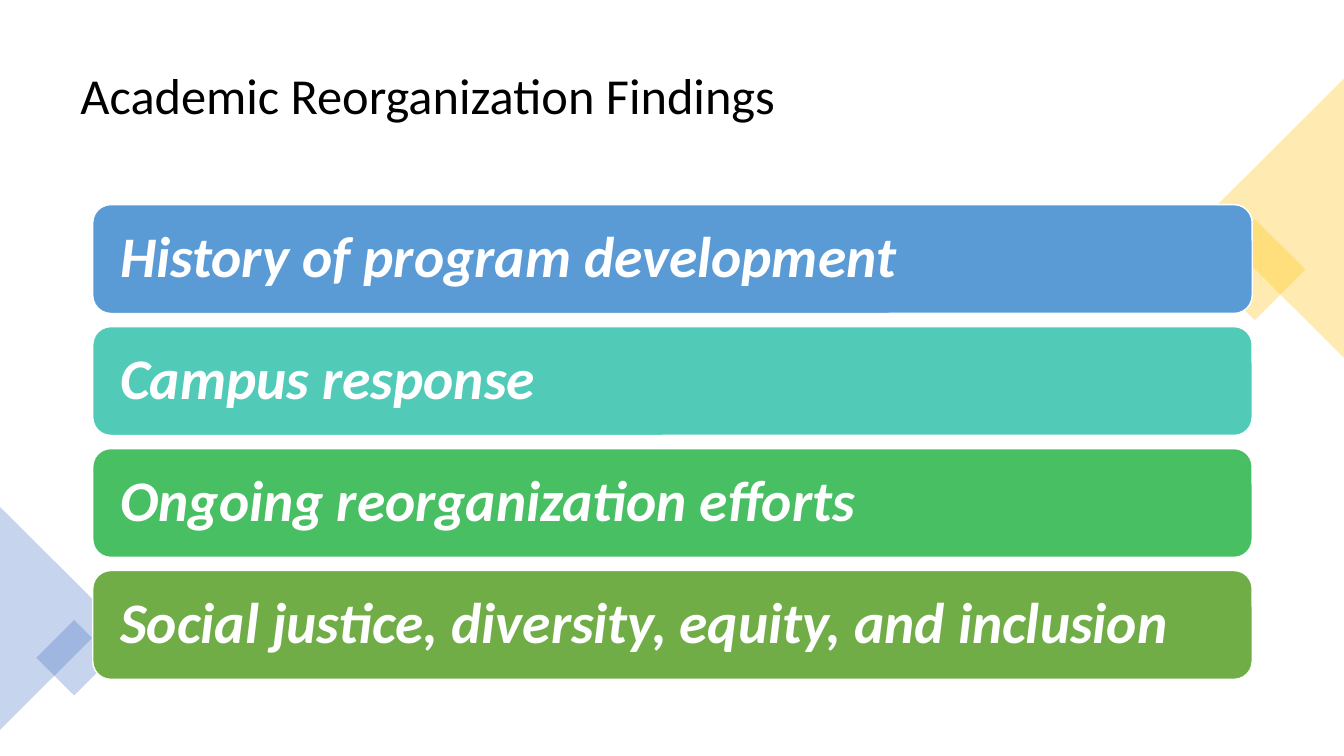
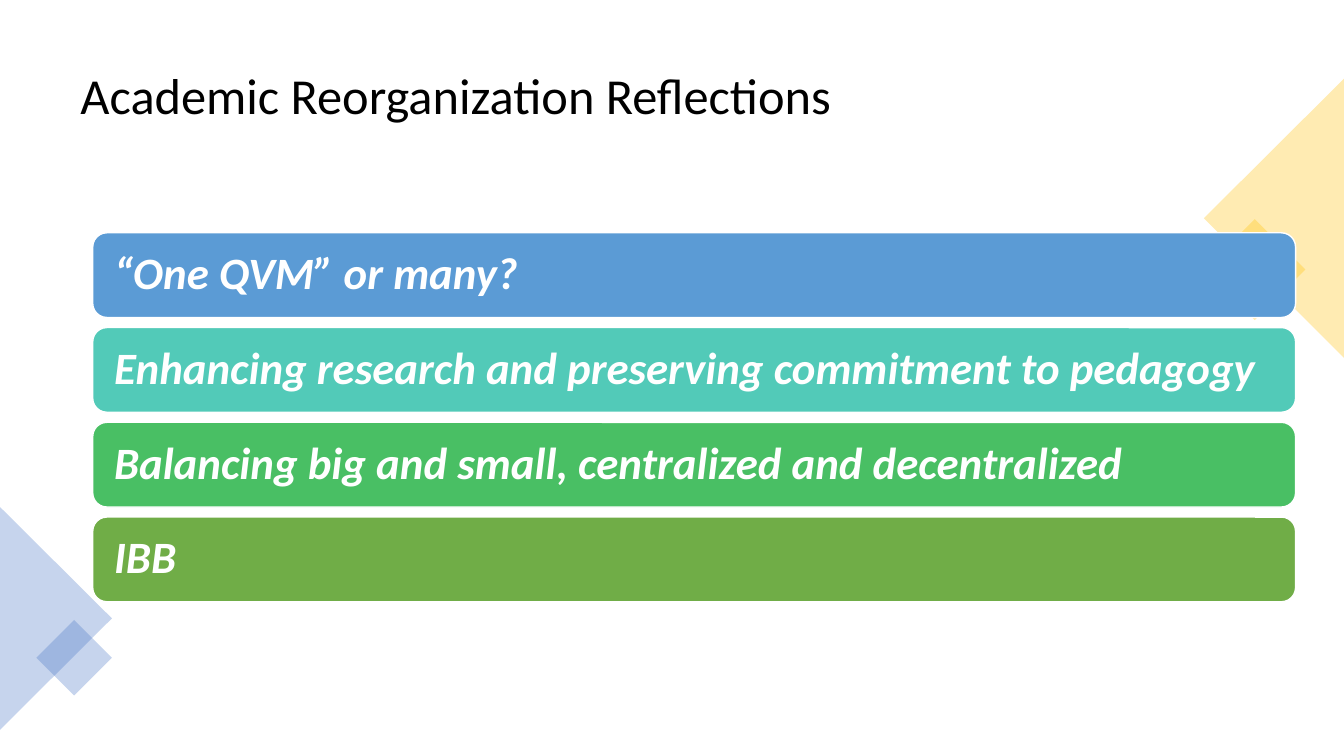
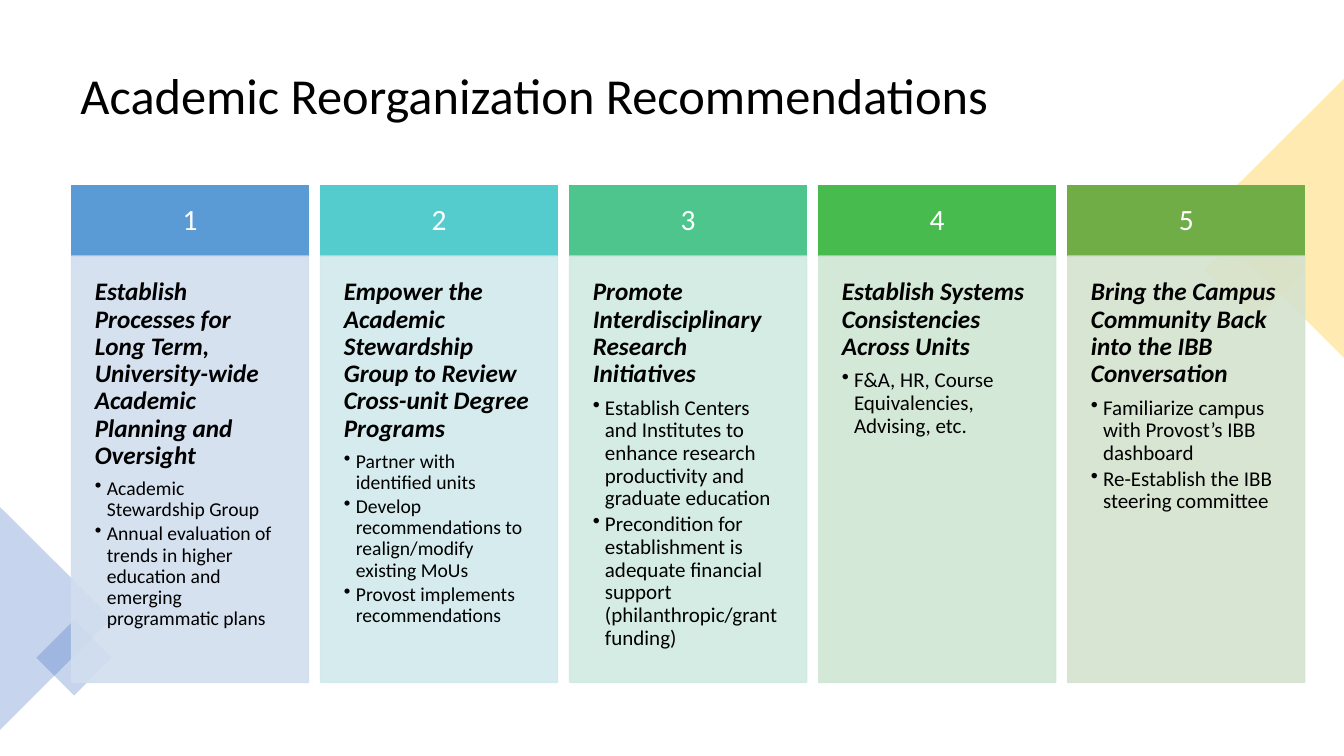
from pptx import Presentation
from pptx import util as u
from pptx.dml.color import RGBColor
from pptx.enum import shapes, text
from pptx.oxml import ns
from lxml import etree

INK = {
    "black": "000000", "white": "FFFFFF", "gold": "FFC000", "royal": "4472C4",
    "blue": "5B9BD5", "teal": "52CAB8", "green": "49BF64", "olive": "70AD47",
    "aqua": "54CCCD", "mint": "4DC58D", "leaf": "48BB4F",
    "pale blue": "D2DEEF", "pale aqua": "D1E9ED", "pale mint": "D0EAE1",
    "pale leaf": "D0E6D4", "pale olive": "D5E3CF",
}
KIND = shapes.MSO_SHAPE
MID = text.MSO_ANCHOR.MIDDLE
TOP = text.MSO_ANCHOR.TOP
LEFT = text.PP_ALIGN.LEFT
MAIN = text.PP_ALIGN.CENTER


class Deck:
    font = "Calibri"

    def __init__(self):
        self.file = Presentation()
        self.file.slide_width = u.Inches(13.33)
        self.file.slide_height = u.Inches(7.5)

    def page(self, title):
        self.slide = self.file.slides.add_slide(self.file.slide_layouts[6])
        box = self.slide.shapes.add_textbox(*map(u.Inches, (0.7, 0.35, 11.93, 1.24)))
        self.frame(box, MID, 0.1, 0.05)
        self.label(box, title, 36, "black")
        self.shape(KIND.RECTANGLE, (12.09, 2.32, 0.71, 0.71), "gold", turn=45, alpha=30)
        self.shape(KIND.ISOSCELES_TRIANGLE, (11.25, 1.47, 2.77, 1.39), "gold", turn=270, alpha=30)
        self.shape(KIND.ISOSCELES_TRIANGLE, (-0.55, 5.58, 2.21, 1.11), "royal", turn=90, alpha=30)
        self.shape(KIND.RECTANGLE, (0.47, 6.26, 0.53, 0.53), "royal", turn=45, alpha=30)

    def shape(self, kind, place, fill, line=None, turn=0, alpha=100):
        item = self.slide.shapes.add_shape(kind, *map(u.Inches, place))
        item.shadow.inherit = False
        item.rotation = turn
        item.fill.solid()
        item.fill.fore_color.rgb = RGBColor.from_string(INK[fill])
        if line:
            item.line.color.rgb = RGBColor.from_string(INK[line])
            item.line.width = u.Pt(1)
        else:
            item.line.fill.background()
        if alpha < 100:
            for tint in item.element.spPr.iter(ns.qn("a:srgbClr")):
                etree.SubElement(tint, ns.qn("a:alpha"), val=str(alpha * 1000))
        return item

    def frame(self, item, anchor, side, edge):
        frame = item.text_frame
        frame.word_wrap = True
        frame.vertical_anchor = anchor
        frame.margin_left = frame.margin_right = u.Inches(side)
        frame.margin_top = frame.margin_bottom = u.Inches(edge)

    def label(self, item, words, size, ink, strong=False, align=LEFT, after=0, dot=False):
        frame = item.text_frame
        para = frame.paragraphs[0]
        if para.runs:
            para = frame.add_paragraph()
        para.alignment = align
        para.line_spacing = 0.9
        para.space_before = u.Pt(0)
        para.space_after = u.Pt(size * after)
        if dot:
            para.level = 1
            props = para._p.get_or_add_pPr()
            props.set("marL", str(u.Inches(0.12)))
            props.set("indent", str(u.Inches(-0.12)))
            etree.SubElement(props, ns.qn("a:buChar"), char="•")
        run = para.add_run()
        run.text = words
        run.font.name = self.font
        run.font.size = u.Pt(size)
        run.font.bold = run.font.italic = strong
        run.font.color.rgb = RGBColor.from_string(INK[ink])

    def bars(self, lines, top, wide, high, step, size, side):
        for row, (words, fill) in enumerate(zip(lines, ("blue", "teal", "green", "olive"))):
            place = (0.92, top + row * step, wide, high)
            bar = self.shape(KIND.ROUNDED_RECTANGLE, place, fill, "white")
            self.frame(bar, MID, side, 0.1)
            self.label(bar, words, size, "white", strong=True)

    def card(self, col, fill, head, size, notes):
        left, wide, pale = 0.71 + col * 2.47, 2.35, "pale " + fill
        cap = self.shape(KIND.RECTANGLE, (left, 1.84, wide, 0.7), fill, fill)
        self.frame(cap, MID, 0.19, 0.1)
        self.label(cap, str(col + 1), 21, "white", align=MAIN)
        body = self.shape(KIND.RECTANGLE, (left, 2.54, wide, 4.23), pale, pale, alpha=90)
        self.frame(body, TOP, 0.23, 0.23)
        self.label(body, head, 18, "black", strong=True, after=0.35)
        for note in notes:
            self.label(body, note, size, "black", after=0.15, dot=True)


FINDS = (
    "History of program development",
    "Campus response",
    "Ongoing reorganization efforts",
    "Social justice, diversity, equity, and inclusion",
)
THOUGHTS = (
    "“One QVM” or many?",
    "Enhancing research and preserving commitment to pedagogy",
    "Balancing big and small, centralized and decentralized",
    "IBB",
)
CARDS = (
    ("blue", "Establish Processes for Long Term, University-wide Academic Planning and Oversight", 14, (
        "Academic Stewardship Group",
        "Annual evaluation of trends in higher education and emerging programmatic plans")),
    ("aqua", "Empower the Academic Stewardship Group to Review Cross-unit Degree Programs", 14, (
        "Partner with identified units",
        "Develop recommendations to realign/modify existing MoUs",
        "Provost implements recommendations")),
    ("mint", "Promote Interdisciplinary Research Initiatives", 15, (
        "Establish Centers and Institutes to enhance research productivity and graduate education",
        "Precondition for establishment is adequate financial support (philanthropic/grant funding)")),
    ("leaf", "Establish Systems Consistencies Across Units", 15, (
        "F&A, HR, Course Equivalencies, Advising, etc.",)),
    ("olive", "Bring the Campus Community Back into the IBB Conversation", 15, (
        "Familiarize campus with Provost’s IBB dashboard",
        "Re-Establish the IBB steering committee")),
)


def main():
    deck = Deck()
    deck.page("Academic Reorganization Findings")
    deck.bars(FINDS, top=2.03, wide=11.5, high=1.08, step=1.21, size=41, side=0.22)
    deck.page("Academic Reorganization Reflections")
    deck.bars(THOUGHTS, top=2.31, wide=11.93, high=0.84, step=0.94, size=32, side=0.17)
    deck.page("Academic Reorganization Recommendations")
    for col, card in enumerate(CARDS):
        deck.card(col, *card)
    deck.file.save("out.pptx")


if __name__ == "__main__":
    main()
